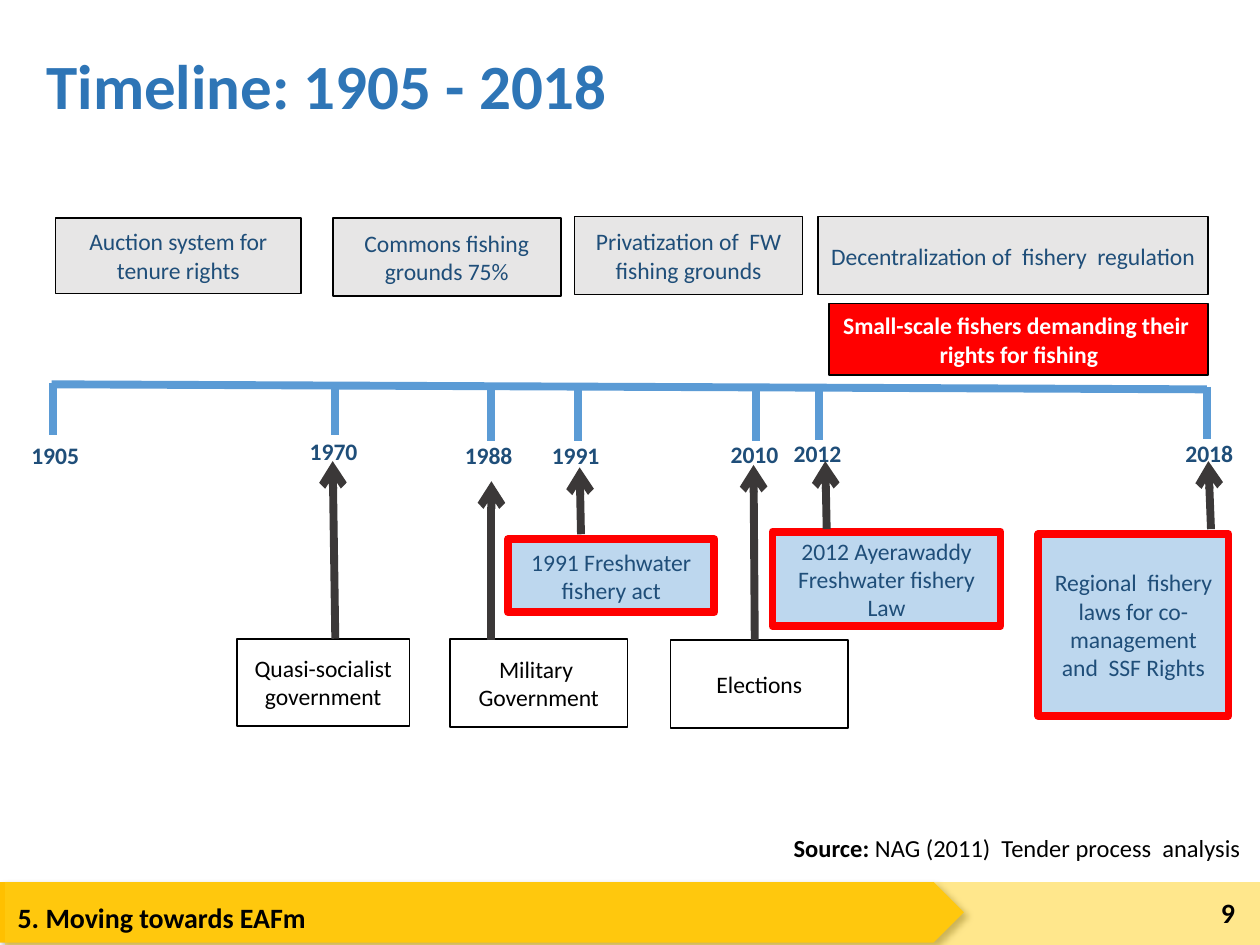
from pptx import Presentation
from pptx.util import Pt
from pptx.dml.color import RGBColor
from pptx.enum.shapes import MSO_SHAPE as Shape, MSO_CONNECTOR as Conn
from pptx.enum.text import PP_ALIGN as Align, MSO_ANCHOR as Anchor, MSO_AUTO_SIZE as Fit
from pptx.oxml import parse_xml
from pptx.oxml.ns import qn, nsdecls
from lxml.etree import SubElement as Sub

BLACK, WHITE, RED = "000000", "FFFFFF", "FF0000"
NAVY, BLUE, AXIS, DARK = "1F4E79", "2E75B6", "5B9BD5", "3B3838"
GREY, PALE = "E7E6E6", "BDD7EE"


def color(code):
    return RGBColor.from_string(code)


def write(frame, runs, size, code, align=Align.LEFT, anchor=Anchor.TOP, wrap=True):
    """Fill a frame with one paragraph of (text, bold) runs."""
    frame.word_wrap = wrap
    frame.vertical_anchor = anchor
    para = frame.paragraphs[0]
    para.alignment = align
    for text, bold in runs:
        run = para.add_run()
        run.text = text
        font = run.font
        font.name, font.size, font.bold = "Calibri", Pt(size), bold
        font.color.rgb = color(code)
    return para


def add_text(slide, box, runs, size, code, **look):
    item = slide.shapes.add_textbox(*map(Pt, box))
    write(item.text_frame, runs, size, code, **look)
    return item


def add_box(slide, box, fill, edge=None, width=1, kind=Shape.RECTANGLE):
    item = slide.shapes.add_shape(kind, *map(Pt, box))
    item.shadow.inherit = False
    item.fill.solid()
    item.fill.fore_color.rgb = color(fill)
    if edge:
        item.line.color.rgb = color(edge)
        item.line.width = Pt(width)
    else:
        item.line.fill.background()
    return item


def add_label(slide, box, text, fill, edge, width, code, bold=False):
    item = add_box(slide, box, fill, edge, width)
    write(item.text_frame, [(text, bold)], 13.5, code, Align.CENTER, Anchor.MIDDLE)


def add_line(slide, start, end, code, arrow=False):
    item = slide.shapes.add_connector(Conn.STRAIGHT, *map(Pt, (*start, *end)))
    item.line.color.rgb = color(code)
    item.line.width = Pt(4.5)
    props = item._element.spPr
    if arrow:
        Sub(props.find(qn("a:ln")), qn("a:tailEnd"), type="arrow")
    Sub(props, qn("a:effectLst"))


def add_title(slide, box):
    title = slide.shapes.title
    title.left, title.top, title.width, title.height = map(Pt, box)
    para = write(title.text_frame, [("Timeline: 1905 - 2018", True)], 36, BLUE)
    para.line_spacing = 0.9


def add_footer(slide, box):
    left, top, width, height = box
    # Banner with a soft shadow
    band = add_box(slide, (left, top, 550.8, 34.6), "FFC000", kind=Shape.PENTAGON)
    props = band._element.spPr
    props.remove(props.find(qn("a:effectLst")))
    props.append(parse_xml(
        f'<a:effectLst {nsdecls("a")}><a:outerShdw blurRad="50800" dist="38100" '
        'dir="2700000" algn="tl" rotWithShape="0"><a:srgbClr val="000000">'
        '<a:alpha val="40000"/></a:srgbClr></a:outerShdw></a:effectLst>'))
    # Translucent strip
    strip = add_box(slide, (left + 3, top, width - 3, height), "FFD01B")
    tint = strip._element.spPr.find(qn("a:solidFill")).find(qn("a:srgbClr"))
    Sub(tint, qn("a:alpha"), val="50000")
    # Section and slide number
    add_text(slide, (left + 3, top + 7.2, 529, 29.5),
             [("5. Moving towards EAFm", True)], 16, BLACK)
    add_text(slide, (left + width - 59.8, top + 3, 52.6, 28.8), [("9", True)], 16, BLACK,
             align=Align.RIGHT, anchor=Anchor.MIDDLE)


def add_eras(slide, box):
    left, top, _, _ = box
    eras = [
        (0, 0.7, 140.4, 43.2, "Auction system for tenure rights"),
        (158.4, 0.7, 130.3, 44.6, "Commons fishing grounds 75%"),
        (296.6, 0, 130.3, 44.6, "Privatization of  FW fishing grounds"),
        (435.6, 0, 223.2, 44.6, "Decentralization of  fishery  regulation"),
    ]
    for x, y, w, h, text in eras:
        add_label(slide, (left + x, top + y, w, h), text, GREY, BLACK, 1, NAVY)
    add_label(slide, (left + 442.1, top + 49.7, 216.7, 41),
              "Small-scale fishers demanding their  rights for fishing",
              RED, BLACK, 1, WHITE, True)


def add_axis(slide, box):
    left, top, width, height = box
    add_line(slide, (left, top + 0.7), (left + width, top + 3.6), AXIS)
    # Year, tick x, tick top, label x, label top
    ticks = [
        ("1905", 0.7, 0, -18.7, 29.5), ("1970", 162, 0, 140.4, 27.4),
        ("1988", 251.3, 3.6, 229, 29.5), ("1991", 301, 3.6, 278.7, 29.5),
        ("2010", 402.5, 3.6, 380.9, 28.8), ("2012", 438.5, 2.9, 416.9, 28.1),
        ("2018", 660.2, 2.2, 640.8, 28.1),
    ]
    for year, x, y, text_x, text_y in ticks:
        add_line(slide, (left + x, top + y), (left + x, top + y + height), AXIS)
        note = add_text(slide, (left + text_x, top + text_y, 42.5, 23.8),
                        [(year, True)], 13.5, NAVY, wrap=False)
        note.text_frame.auto_size = Fit.SHAPE_TO_FIT_TEXT


def add_events(slide, box):
    left, top, _, _ = box
    rule, law = (WHITE, BLACK, 1, BLACK), (PALE, RED, 4.5, NAVY)
    # Text, look, box, arrow start, arrow end
    events = [
        ("Quasi-socialist government", rule, (0, 101.5, 98.6, 49.7),
         (56.2, 101.5), (54.7, 0)),
        ("Military  Government", rule, (121.7, 101.5, 101.5, 50.4),
         (145.4, 102.2), (145.4, 11.5)),
        ("Elections", rule, (247.7, 102.2, 101.5, 50.4),
         (295.9, 102.2), (295.2, 2.2)),
        ("1991 Freshwater fishery act", law, (154.8, 44.6, 118.1, 41.8),
         (196.6, 41.8), (195.8, 3.6)),
        ("2012 Ayerawaddy Freshwater fishery Law", law, (306, 40.3, 130.3, 54),
         (337, 38.9), (336.2, 0)),
        ("Regional  fishery laws for co-management and  SSF Rights", law,
         (457.9, 41.8, 108.7, 103.7), (556.6, 38.9), (555.1, 0)),
    ]
    for text, look, (x, y, w, h), start, end in events:
        add_label(slide, (left + x, top + y, w, h), text, *look)
        start, end = [(left + u, top + v) for u, v in (start, end)]
        add_line(slide, start, end, DARK, True)


def add_source(slide, box):
    note = add_text(slide, box, [("Source: ", True),
                                 ("NAG (2011)  Tender process  analysis", False)],
                    14, BLACK, wrap=False)
    note.text_frame.auto_size = Fit.SHAPE_TO_FIT_TEXT


def main():
    deck = Presentation()
    deck.slide_width, deck.slide_height = Pt(720), Pt(540)
    slide = deck.slides.add_slide(deck.slide_layouts[5])
    add_footer(slide, (0, 504, 720, 38))
    add_title(slide, (19.4, 28, 650, 59))
    add_eras(slide, (31.7, 123.8, 659, 91))
    add_axis(slide, (29.5, 218.9, 660.2, 29.5))
    add_events(slide, (135.4, 263.5, 567, 153))
    add_source(slide, (446.4, 472.3, 272.2, 24.5))
    deck.save("out.pptx")


if __name__ == "__main__":
    main()
